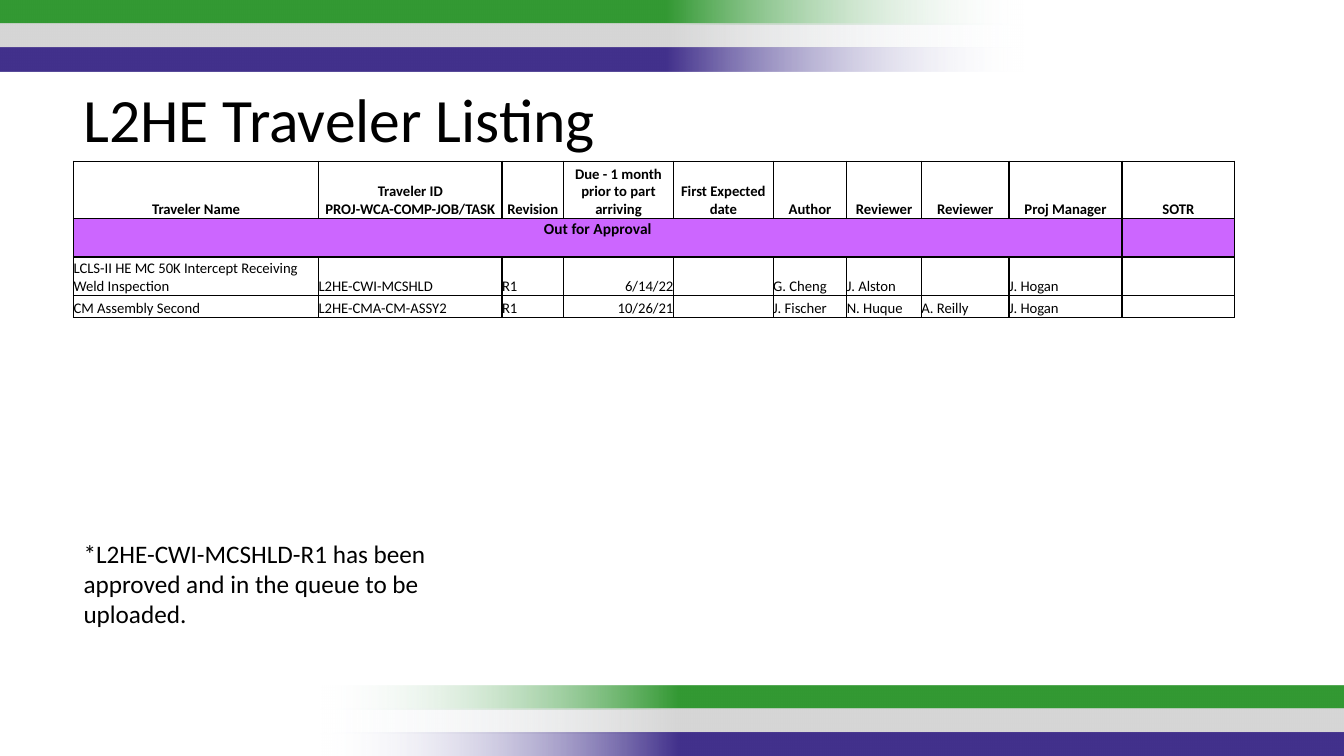
from dataclasses import dataclass

from lxml.etree import SubElement
from pptx import Presentation
from pptx.dml.color import RGBColor as Rgb
from pptx.enum.shapes import MSO_SHAPE as Shape
from pptx.enum.text import MSO_ANCHOR as Anchor, PP_ALIGN as Align
from pptx.oxml import parse_xml
from pptx.oxml.ns import nsdecls, qn
from pptx.util import Inches, Pt


@dataclass(frozen=True)
class Theme:
    """Colours and type sizes of the slide."""
    font: str = "Calibri"
    ink: str = "000000"
    fade: str = "F7FAFD"
    stripes: tuple = ("339933", "D6D6D6", "42318C")
    approval: str = "CC66FF"
    title: float = 44
    note: float = 18
    band: float = 11
    cell: float = 10.5


class TravelerSlide:
    """Draws the elements of one slide in one theme."""

    def __init__(self, slide, theme):
        self.slide = slide
        self.theme = theme

    def style(self, paragraph, size, bold=False, align=Align.LEFT):
        """Set the font and alignment of a paragraph."""
        paragraph.alignment = align
        font = paragraph.font
        font.name, font.size, font.bold = self.theme.font, Pt(size), bold
        font.color.rgb = Rgb.from_string(self.theme.ink)

    def stripe(self, left, top, color, rotation):
        """Draw a stripe that fades out at one end."""
        bar = self.slide.shapes.add_shape(
            Shape.RECTANGLE, Inches(left), Inches(top), Inches(10.17), Inches(0.24))
        bar.rotation = rotation
        bar.shadow.inherit = False
        bar.line.fill.background()
        gradient = parse_xml(
            f'<a:gradFill {nsdecls("a")} rotWithShape="1"><a:gsLst>'
            f'<a:gs pos="0"><a:srgbClr val="{self.theme.fade}"><a:alpha val="0"/></a:srgbClr></a:gs>'
            f'<a:gs pos="35000"><a:srgbClr val="{color}"/></a:gs>'
            f'<a:gs pos="100000"><a:srgbClr val="{color}"/></a:gs>'
            '</a:gsLst><a:lin ang="0" scaled="0"/></a:gradFill>')
        bar._element.spPr.find(qn("a:prstGeom")).addnext(gradient)

    def stripes(self, left, top, rotation=0):
        """Stack one stripe of each colour."""
        for index, color in enumerate(self.theme.stripes):
            self.stripe(left, top + index * 0.235, color, rotation)

    def text(self, words, left, top, width, height, size):
        """Write a wrapped text box."""
        box = self.slide.shapes.add_textbox(
            Inches(left), Inches(top), Inches(width), Inches(height))
        box.text_frame.word_wrap = True
        box.text_frame.text = words
        self.style(box.text_frame.paragraphs[0], size)

    def borders(self, cell):
        """Rule all four sides of a cell."""
        properties = cell._tc.get_or_add_tcPr()
        for position, side in enumerate(("lnL", "lnR", "lnT", "lnB")):
            properties.insert(position, parse_xml(
                f'<a:{side} {nsdecls("a")} w="12700"><a:solidFill>'
                f'<a:srgbClr val="{self.theme.ink}"/></a:solidFill></a:{side}>'))

    def cell(self, cell, words, size, bold, align, inset, fill=None):
        """Fill in one table cell."""
        cell.margin_left = cell.margin_right = cell.margin_top = Inches(inset)
        cell.margin_bottom = 0
        cell.vertical_anchor = Anchor.TOP if fill else Anchor.BOTTOM
        if fill:
            cell.fill.solid()
            cell.fill.fore_color.rgb = Rgb.from_string(fill)
        else:
            cell.fill.background()
        self.borders(cell)
        paragraph = cell.text_frame.paragraphs[0]
        if words:
            paragraph.text = words
        else:
            SubElement(paragraph._p, qn("a:endParaRPr")).set("sz", str(int(size * 100)))
        self.style(paragraph, size, bold, align)

    def table(self, left, top, widths, heights, headings, band, travelers):
        """Draw the traveler table with its approval band."""
        theme = self.theme
        rows = [headings, [band] + [""] * (len(headings) - 1), *travelers]
        table = self.slide.shapes.add_table(
            len(rows), len(widths), Inches(left), Inches(top),
            Inches(sum(widths)), Inches(sum(heights))).table
        table.first_row = table.horz_banding = False
        for column, width in zip(table.columns, widths):
            column.width = Inches(width)
        for row, height in zip(table.rows, heights):
            row.height = Inches(height)
        for r, row in enumerate(rows):
            for c, words in enumerate(row):
                cell = table.cell(r, c)
                if r == 0:
                    self.cell(cell, words, theme.cell, True, Align.CENTER, 0.01)
                elif r == 1:
                    self.cell(cell, words, theme.band, True, Align.CENTER, 0.01, theme.approval)
                else:
                    align = Align.RIGHT if c == 3 else Align.LEFT
                    self.cell(cell, words, theme.cell, False, align, 0)
        table.cell(1, 0).merge(table.cell(1, len(widths) - 2))


def main():
    """Build and save the traveler listing."""
    deck = Presentation()
    deck.slide_width, deck.slide_height = Inches(13.33), Inches(7.5)
    theme = Theme()
    listing = TravelerSlide(deck.slides.add_slide(deck.slide_layouts[6]), theme)
    listing.stripes(-0.01, 0, rotation=180)
    listing.stripes(3.18, 6.8)
    listing.table(
        0.73, 1.6,
        widths=[2.43, 1.82, 0.61, 1.09, 0.99, 0.73, 0.74, 0.87, 1.12, 1.12],
        heights=[0.57, 0.38, 0.38, 0.22],
        headings=["Traveler Name", "Traveler ID\vPROJ-WCA-COMP-JOB/TASK", "Revision",
                  "Due - 1 month prior to part arriving", "First Expected date", "Author",
                  "Reviewer", "Reviewer", "Proj Manager", "SOTR"],
        band="Out for Approval",
        travelers=[
            ["LCLS-II HE MC 50K Intercept Receiving Weld Inspection", "L2HE-CWI-MCSHLD", "R1",
             "6/14/22", "", "G. Cheng", "J. Alston", "", "J. Hogan", ""],
            ["CM Assembly Second", "L2HE-CMA-CM-ASSY2", "R1",
             "10/26/21", "", "J. Fischer", "N. Huque", "A. Reilly", "J. Hogan", ""],
        ])
    listing.text("L2HE Traveler Listing", 0.73, 0.75, 10.31, 0.84, theme.title)
    listing.text("*L2HE-CWI-MCSHLD-R1 has been approved and in the queue to be uploaded.",
                 0.73, 5.29, 3.89, 1.01, theme.note)
    deck.save("out.pptx")


if __name__ == "__main__":
    main()
